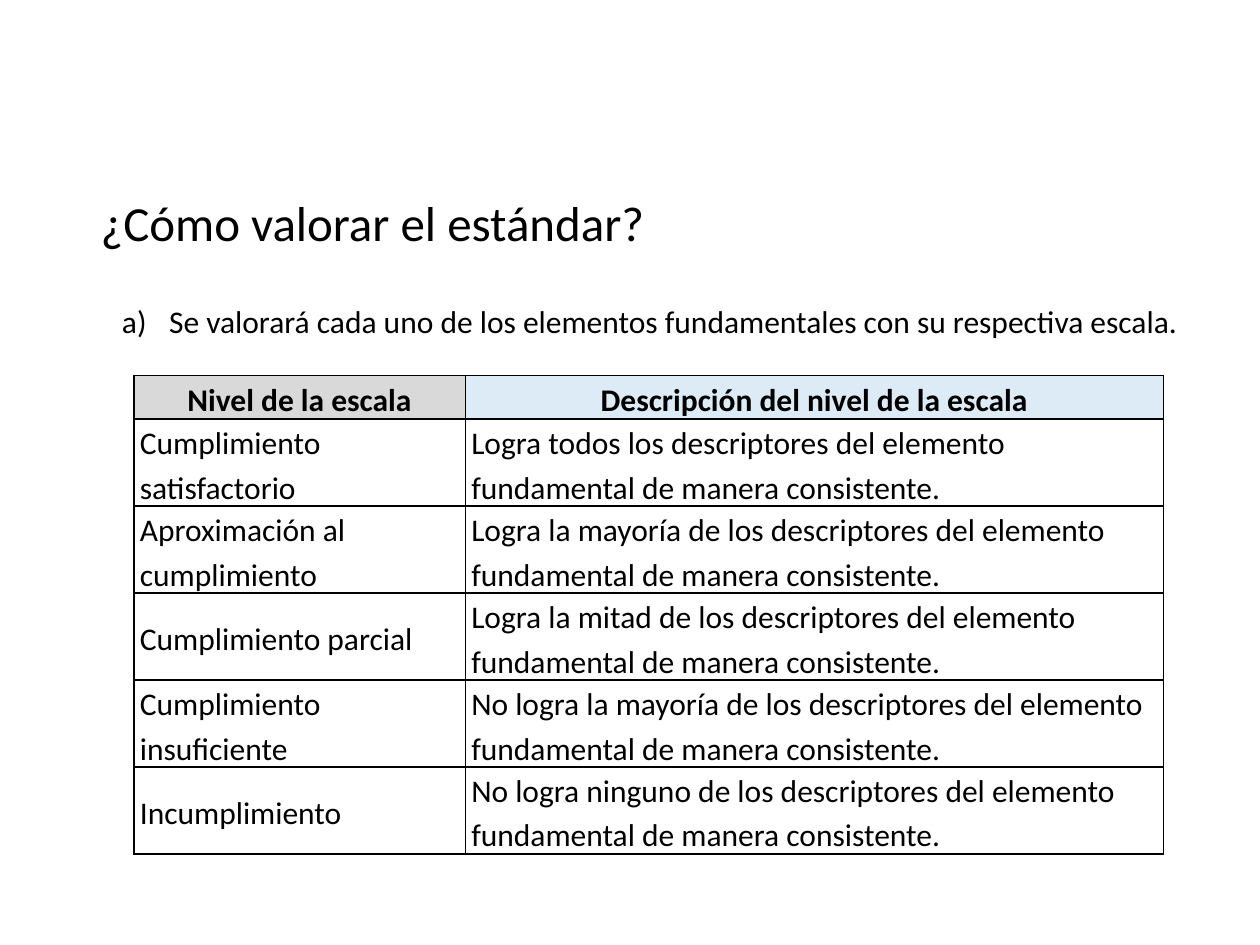
import pptx
import pptx.dml.color
import pptx.enum.shapes
import pptx.enum.text
import pptx.oxml
import pptx.oxml.ns
import pptx.util
from pptx.util import Cm

COLORS = {"text": "000000", "paper": "FFFFFF", "level": "D9D9D9",
          "description": "DDEBF7", "border": "000000"}
ALIGN = pptx.enum.text.PP_ALIGN
MIDDLE = pptx.enum.text.MSO_ANCHOR.MIDDLE


def rgb(name):
    return pptx.dml.color.RGBColor.from_string(COLORS[name])


class SlideBuilder:
    font_name = "Calibri"
    body_size = 18
    line_spacing = 1.15

    def __init__(self, slide):
        self.slide = slide

    def set_text(self, paragraph, text, size, align, bold=False):
        paragraph.text = text
        paragraph.alignment = align
        font = paragraph.font
        font.name, font.size, font.bold = self.font_name, pptx.util.Pt(size), bold
        font.color.rgb = rgb("text")

    def title(self, text, left, top, width, height):
        panel = self.slide.shapes.add_shape(
            pptx.enum.shapes.MSO_SHAPE.ROUNDED_RECTANGLE, left, top, width, height)
        panel.shadow.inherit = False
        panel.fill.solid()
        panel.fill.fore_color.rgb = rgb("paper")
        panel.line.fill.background()
        panel.text_frame.vertical_anchor = MIDDLE
        self.set_text(panel.text_frame.paragraphs[0], text, 28, ALIGN.LEFT)

    def lettered_item(self, text, left, top, width, height):
        frame = self.slide.shapes.add_textbox(left, top, width, height).text_frame
        frame.word_wrap = True
        frame.auto_size = pptx.enum.text.MSO_AUTO_SIZE.SHAPE_TO_FIT_TEXT
        item = frame.paragraphs[0]
        item.line_spacing = self.line_spacing
        item.space_after = pptx.util.Pt(10)
        properties = item._p.get_or_add_pPr()
        indent = Cm(0.95)
        properties.set("marL", str(indent))
        properties.set("indent", str(-indent))
        numbering = pptx.oxml.parse_xml(
            f'<a:buAutoNum {pptx.oxml.ns.nsdecls("a")} type="alphaLcParenR"/>')
        properties.append(numbering)
        self.set_text(item, text, self.body_size, ALIGN.JUSTIFY)

    def cell_borders(self, cell):
        properties = cell._tc.get_or_add_tcPr()
        for side in "LRTB":
            properties.append(pptx.oxml.parse_xml(
                f'<a:ln{side} {pptx.oxml.ns.nsdecls("a")} w="{pptx.util.Pt(1)}">'
                f'<a:solidFill><a:srgbClr val="{COLORS["border"]}"/></a:solidFill>'
                f'</a:ln{side}>'))

    def cell(self, cell, text, header_fill=None):
        cell.margin_left = cell.margin_right = Cm(0.12)
        cell.margin_top = cell.margin_bottom = 0
        cell.vertical_anchor = MIDDLE
        self.cell_borders(cell)
        if header_fill:
            cell.fill.solid()
            cell.fill.fore_color.rgb = rgb(header_fill)
        else:
            cell.fill.background()
        paragraph = cell.text_frame.paragraphs[0]
        paragraph.line_spacing = self.line_spacing
        self.set_text(paragraph, text, self.body_size,
                      ALIGN.CENTER if header_fill else ALIGN.LEFT, bool(header_fill))

    def table(self, rows, header_fills, left, top, widths, header_height, row_height):
        heights = [header_height] + [row_height] * (len(rows) - 1)
        table = self.slide.shapes.add_table(
            len(rows), len(widths), left, top, sum(widths), sum(heights)).table
        table.first_row = table.horz_banding = False
        for column, width in zip(table.columns, widths):
            column.width = width
        for r, (texts, height) in enumerate(zip(rows, heights)):
            table.rows[r].height = height
            for c, text in enumerate(texts):
                self.cell(table.cell(r, c), text, header_fills[c] if r == 0 else None)


def main():
    presentation = pptx.Presentation()
    presentation.slide_width, presentation.slide_height = Cm(25.4), Cm(19.05)
    builder = SlideBuilder(presentation.slides.add_slide(presentation.slide_layouts[6]))

    # Heading and instruction
    builder.title("¿Cómo valorar el estándar?", Cm(1.68), Cm(3.45), Cm(22.78), Cm(2.06))
    builder.lettered_item(
        "Se valorará cada uno de los elementos fundamentales con su respectiva escala.",
        Cm(2.21), Cm(5.84), Cm(22.56), Cm(1.14))

    # Rating scale: every description shares its ending
    achievements = [
        ("Cumplimiento satisfactorio", "Logra todos los"),
        ("Aproximación al cumplimiento", "Logra la mayoría de los"),
        ("Cumplimiento parcial", "Logra la mitad de los"),
        ("Cumplimiento insuficiente", "No logra la mayoría de los"),
        ("Incumplimiento", "No logra ninguno de los"),
    ]
    ending = "descriptores del elemento fundamental de manera consistente."
    scale = [("Nivel de la escala", "Descripción del nivel de la escala")]
    scale += [(level, f"{start} {ending}") for level, start in achievements]
    builder.table(scale, ("level", "description"), Cm(2.7), Cm(7.57),
                  (Cm(6.68), Cm(14.07)), Cm(0.88), Cm(1.75))

    presentation.save("out.pptx")


if __name__ == "__main__":
    main()
